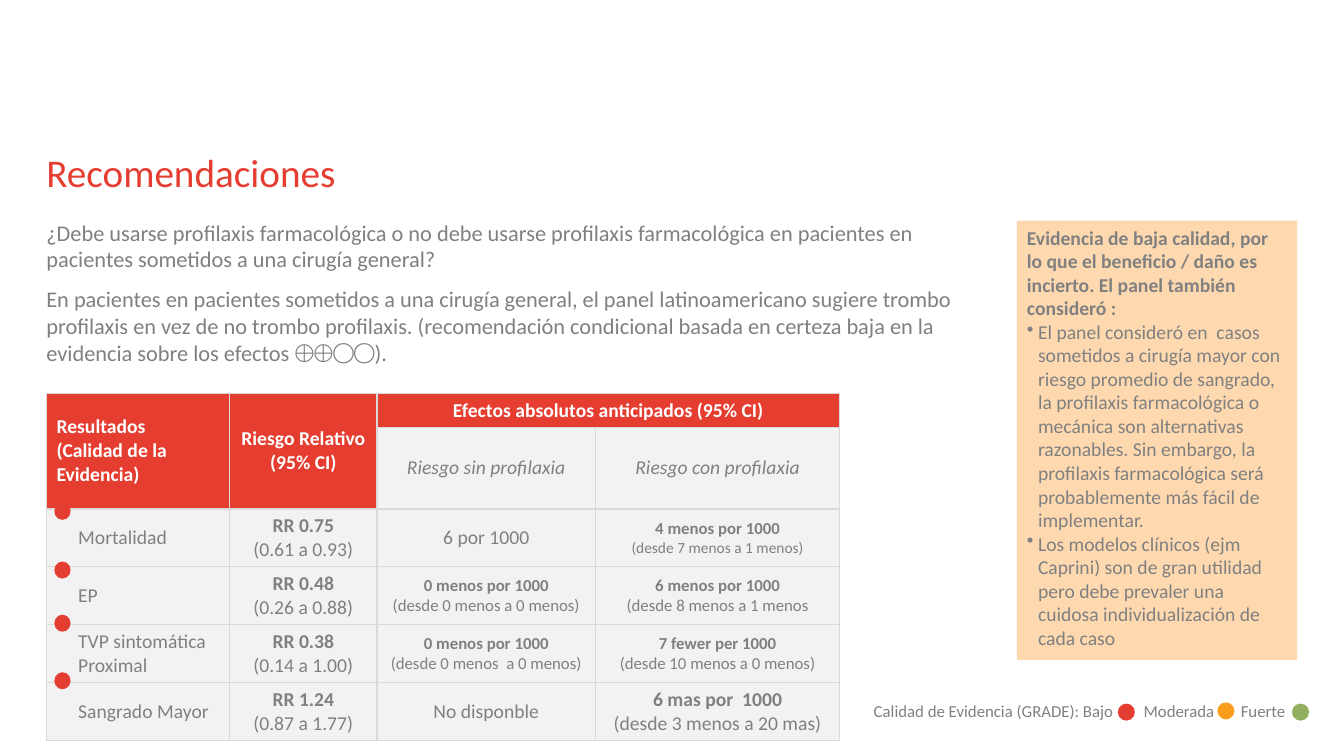
import dataclasses
import typing

import lxml.etree
import pptx
import pptx.dml.color
import pptx.enum.shapes
import pptx.enum.text
import pptx.oxml
import pptx.oxml.ns
import pptx.util

Cm = pptx.util.Cm
Pt = pptx.util.Pt
qn = pptx.oxml.ns.qn
ALIGN = pptx.enum.text.PP_ALIGN
ANCHOR = pptx.enum.text.MSO_ANCHOR
SHAPE = pptx.enum.shapes.MSO_SHAPE

COLOURS = {
    "header": "E53E31", "low": "E43E32", "moderate": "F99D1C", "strong": "91AF5F",
    "panel": "FED9B0", "cell": "F2F2F2", "border": "D9D9D9", "grey": "808080", "white": "FFFFFF",
}


@dataclasses.dataclass
class Span:
    text: str
    size: float = 14
    bold: bool = False
    italic: bool = False
    colour: str = "grey"
    font: str = "Calibri"
    break_after: bool = False


@dataclasses.dataclass
class Para:
    spans: list[Span]
    align: typing.Any = ALIGN.LEFT
    bullet: bool = False
    tabs: tuple[float, ...] = ()


@dataclasses.dataclass
class Area:
    left: float
    top: float
    width: float
    height: float

    def lengths(self) -> list[int]:
        return [Cm(value) for value in dataclasses.astuple(self)]


@dataclasses.dataclass
class TextBlock:
    area: Area
    paras: list[Para]
    inset: bool = False


@dataclasses.dataclass
class Dot:
    area: Area
    colour: str


def rgb(name: str) -> pptx.dml.color.RGBColor:
    return pptx.dml.color.RGBColor.from_string(COLOURS[name])


def apply(target: typing.Any, values: dict[str, typing.Any]) -> None:
    for name, value in values.items():
        setattr(target, name, value)


def write(frame: typing.Any, paras: list[Para]) -> None:
    for index, para in enumerate(paras):
        paragraph = frame.paragraphs[0] if index == 0 else frame.add_paragraph()
        paragraph.alignment = para.align
        properties = paragraph._p.get_or_add_pPr()
        if para.bullet:
            properties.set("marL", str(Cm(0.28)))
            properties.set("indent", str(Cm(-0.28)))
            lxml.etree.SubElement(properties, qn("a:buChar")).set("char", "•")
        if para.tabs:
            stops = lxml.etree.SubElement(properties, qn("a:tabLst"))
            for position in para.tabs:
                stop = lxml.etree.SubElement(stops, qn("a:tab"))
                stop.set("pos", str(Cm(position)))
                stop.set("algn", "l")
        for span in para.spans:
            run = paragraph.add_run()
            run.text = span.text
            apply(run.font, {"name": span.font, "size": Pt(span.size),
                             "bold": span.bold, "italic": span.italic})
            run.font.color.rgb = rgb(span.colour)
            if span.break_after:
                paragraph.add_line_break()


def add_text(page: typing.Any, block: TextBlock) -> None:
    box = page.shapes.add_textbox(*block.area.lengths())
    box.text_frame.word_wrap = True
    if not block.inset:
        apply(box.text_frame, {"margin_left": 0, "margin_right": 0, "margin_top": 0, "margin_bottom": 0})
    write(box.text_frame, block.paras)


def add_filled(page: typing.Any, kind: typing.Any, area: Area, colour: str) -> typing.Any:
    shape = page.shapes.add_shape(kind, *area.lengths())
    shape.shadow.inherit = False
    shape.fill.solid()
    shape.fill.fore_color.rgb = rgb(colour)
    shape.line.fill.background()
    return shape


def style_cell(cell: typing.Any, colour: str) -> None:
    cell.fill.solid()
    cell.fill.fore_color.rgb = rgb(colour)
    cell.vertical_anchor = ANCHOR.MIDDLE
    properties = cell._tc.get_or_add_tcPr()
    for index, side in enumerate(("a:lnL", "a:lnR", "a:lnT", "a:lnB")):
        line = lxml.etree.Element(qn(side), w=str(Pt(1)))
        fill = lxml.etree.SubElement(line, qn("a:solidFill"))
        lxml.etree.SubElement(fill, qn("a:srgbClr")).set("val", COLOURS["border"])
        properties.insert(index, line)


def heading(*lines: str, align: typing.Any = ALIGN.CENTER) -> list[Para]:
    return [Para([Span(line, bold=True, colour="white")], align) for line in lines]


def subheading(text: str) -> list[Para]:
    return [Para([Span(text, italic=True)], ALIGN.CENTER)]


def outcome(*lines: str) -> list[Para]:
    return [Para([Span(line)]) for line in lines]


def plain(text: str) -> list[Para]:
    return [Para([Span(text)], ALIGN.CENTER)]


def estimate(value: str, interval: str, size: float = 14, interval_size: float = 0) -> list[Para]:
    return [Para([Span(value, size, bold=True, break_after=True),
                  Span(interval, interval_size or size)], ALIGN.CENTER)]


TABLE_AREA = Area(1.17, 9.91, 19.99, 8.58)
COLUMN_WIDTHS = [4.62, 3.71, 5.51, 6.15]
ROW_HEIGHTS = [0.84, 2.03, 1.41, 1.43, 1.46, 1.41]
MERGES = [((0, 0), (1, 0)), ((0, 1), (1, 1)), ((0, 2), (0, 3))]
HEADER_CELLS = {(0, 0), (1, 0), (0, 1), (1, 1), (0, 2), (0, 3)}
RESULTS = [
    [heading("Resultados", "(Calidad de la Evidencia)", align=ALIGN.LEFT),
     heading("Riesgo Relativo", "(95% CI)"), heading("Efectos absolutos anticipados (95% CI)"), []],
    [[], [], subheading("Riesgo sin profilaxia"), subheading("Riesgo con profilaxia")],
    [outcome("Mortalidad"), estimate("RR 0.75", "(0.61 a 0.93)"), plain("6 por 1000"),
     estimate("4 menos por 1000", "(desde 7 menos a 1 menos)", 12, 11)],
    [outcome("EP"), estimate("RR 0.48", "(0.26 a 0.88)"),
     estimate("0 menos por 1000", "(desde 0 menos a 0 menos)", 12),
     estimate("6 menos por 1000", "(desde 8 menos a 1 menos", 12)],
    [outcome("TVP sintomática", "Proximal"), estimate("RR 0.38", "(0.14 a 1.00)"),
     estimate("0 menos por 1000", "(desde 0 menos  a 0 menos)", 12),
     estimate("7 fewer per 1000", "(desde 10 menos a 0 menos)", 12)],
    [outcome("Sangrado Mayor"), estimate("RR 1.24", "(0.87 a 1.77)"), plain("No disponble"),
     estimate("6 mas por  1000", "(desde 3 menos a 20 mas)")],
]
PANEL = TextBlock(Area(25.63, 5.56, 7.06, 11.07), [
    Para([Span("Evidencia de baja calidad, por lo que el beneficio / daño es incierto. "
               "El panel también consideró :", bold=True)]),
    Para([Span("El panel consideró en  casos  sometidos a cirugía mayor con riesgo promedio de sangrado, "
               "la profilaxis farmacológica o mecánica son alternativas razonables. Sin embargo, "
               "la profilaxis farmacológica será probablemente más fácil de implementar.")], bullet=True),
    Para([Span("Los modelos clínicos (ejm Caprini) son de gran utilidad pero debe prevaler una "
               "cuidosa individualización de cada caso")], bullet=True),
])
DOTS = [Dot(Area(1.37, top, 0.41, 0.43), "low") for top in (12.67, 14.15, 15.49, 16.94)] + [
    Dot(Area(28.17, 17.73, 0.43, 0.43), "low"),
    Dot(Area(30.68, 17.7, 0.43, 0.43), "moderate"),
    Dot(Area(32.56, 17.73, 0.43, 0.43), "strong"),
]
TEXTS = [
    TextBlock(Area(21.77, 17.53, 12.09, 0.76), [
        Para([Span("Calidad de Evidencia (GRADE): Bajo\tModerada\tFuerte", 12)], tabs=(6.8, 9.25))], inset=True),
    TextBlock(Area(1.17, 3.73, 30.48, 1.98), [Para([Span("Recomendaciones", 28, colour="header")])]),
    TextBlock(Area(1.17, 5.51, 24.05, 10.97), [
        Para([Span("¿Debe usarse profilaxis farmacológica o no debe usarse profilaxis farmacológica "
                   "en pacientes en pacientes sometidos a una cirugía general?", 16)])]),
    TextBlock(Area(1.17, 7.19, 24.05, 2.06), [
        Para([Span("En pacientes en pacientes sometidos a una cirugía general, el panel latinoamericano "
                   "sugiere trombo profilaxis en vez de no trombo profilaxis. (recomendación condicional "
                   "basada en certeza baja en la evidencia sobre los efectos ", 16),
              Span("⨁⨁◯◯", 16, font="Times New Roman"), Span(").", 16)])]),
]


def add_results(page: typing.Any) -> None:
    table = page.shapes.add_table(len(ROW_HEIGHTS), len(COLUMN_WIDTHS), *TABLE_AREA.lengths()).table
    apply(table, {"first_row": False, "horz_banding": False})
    for column, width in zip(table.columns, COLUMN_WIDTHS):
        column.width = Cm(width)
    for row, height in zip(table.rows, ROW_HEIGHTS):
        row.height = Cm(height)
    for first, last in MERGES:
        table.cell(*first).merge(table.cell(*last))
    for row_index, row in enumerate(RESULTS):
        for column_index, paras in enumerate(row):
            cell = table.cell(row_index, column_index)
            style_cell(cell, "header" if (row_index, column_index) in HEADER_CELLS else "cell")
            if column_index == 0 and row_index > 1:
                cell.margin_left = Cm(0.8)
            write(cell.text_frame, paras)


def main() -> None:
    deck = pptx.Presentation()
    apply(deck, {"slide_width": Cm(33.87), "slide_height": Cm(19.05)})
    page = deck.slides.add_slide(deck.slide_layouts[6])
    add_results(page)
    panel = add_filled(page, SHAPE.RECTANGLE, PANEL.area, "panel")
    apply(panel.text_frame, {"word_wrap": True, "vertical_anchor": ANCHOR.TOP})
    write(panel.text_frame, PANEL.paras)
    for dot in DOTS:
        add_filled(page, SHAPE.OVAL, dot.area, dot.colour)
    for block in TEXTS:
        add_text(page, block)
    deck.save("out.pptx")


if __name__ == "__main__":
    main()
